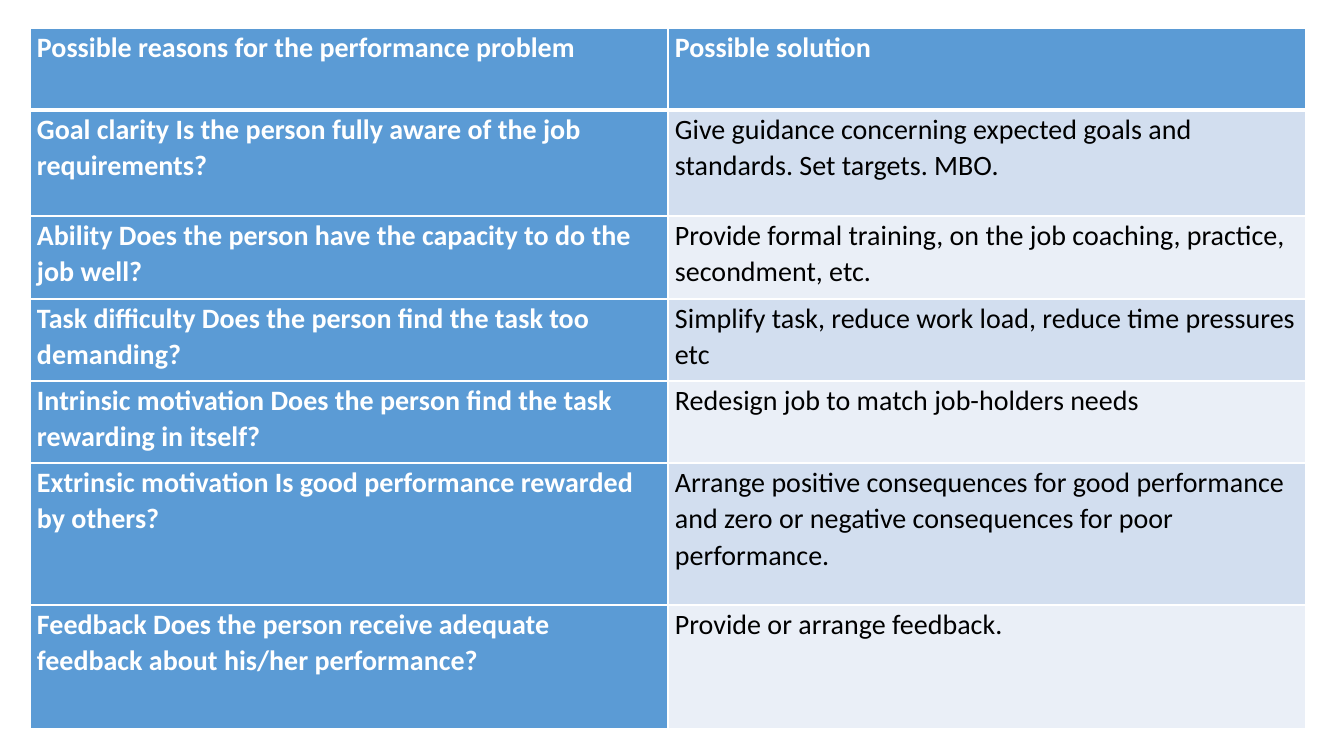
from lxml.etree import SubElement
from pptx import Presentation
from pptx.dml.color import RGBColor
from pptx.oxml.ns import qn
from pptx.util import Emu, Pt

ROWS = [
    (82, "Possible reasons for the performance problem",
     "Possible solution"),
    (106, "Goal clarity Is the person fully aware of the job requirements?",
     "Give guidance concerning expected goals and standards. Set targets. MBO."),
    (83, "Ability Does the person have the capacity to do the job well?",
     "Provide formal training, on the job coaching, practice, secondment, etc."),
    (82, "Task difficulty Does the person find the task too demanding?",
     "Simplify task, reduce work load, reduce time pressures etc"),
    (82, "Intrinsic motivation Does the person find the task rewarding in itself?",
     "Redesign job to match job-holders needs"),
    (142, "Extrinsic motivation Is good performance rewarded by others?",
     "Arrange positive consequences for good performance and zero or negative "
     "consequences for poor performance."),
    (124, "Feedback Does the person receive adequate feedback about his/her performance?",
     "Provide or arrange feedback."),
]
COLORS = {"head": "5B9BD5", "odd": "D2DEEF", "even": "EAEFF7",
          "white": "FFFFFF", "black": "000000"}
LEFT, TOP, WIDTH, INSET = 30, 28, 638, 7
SCALE = 914400 / 100.8


def px(n):
    return Emu(round(n * SCALE))


def color(name):
    return RGBColor.from_string(COLORS[name])


def border(cell, side, width):
    line = SubElement(cell._tc.get_or_add_tcPr(), qn("a:ln" + side), w=str(Pt(width)))
    fill = SubElement(line, qn("a:solidFill"))
    SubElement(fill, qn("a:srgbClr"), val=COLORS["white"])


def style(cell, text, row, col):
    head = row == 0 or col == 0
    thick = {(0, "B"), (1, "T")}
    for side in "LRTB":
        border(cell, side, 3 if (row, side) in thick else 1)
    cell.fill.solid()
    cell.fill.fore_color.rgb = color("head" if head else "odd" if row % 2 else "even")
    cell.margin_left = cell.margin_right = px(INSET)
    cell.margin_top = cell.margin_bottom = 0
    cell.text_frame.text = text
    para = cell.text_frame.paragraphs[0]
    para.line_spacing = 1.07
    font = para.runs[0].font
    font.name, font.size, font.bold = "Calibri", Pt(20), head
    font.color.rgb = color("white" if head else "black")


def main():
    deck = Presentation()
    deck.slide_width, deck.slide_height = px(1344), px(756)
    slide = deck.slides.add_slide(deck.slide_layouts[6])
    height = sum(row[0] for row in ROWS)
    table = slide.shapes.add_table(len(ROWS), 2, px(LEFT), px(TOP),
                                   px(2 * WIDTH), px(height)).table
    for col in table.columns:
        col.width = px(WIDTH)
    for row, (tall, *texts) in enumerate(ROWS):
        table.rows[row].height = px(tall)
        for col, text in enumerate(texts):
            style(table.cell(row, col), text, row, col)
    deck.save("out.pptx")


if __name__ == "__main__":
    main()
